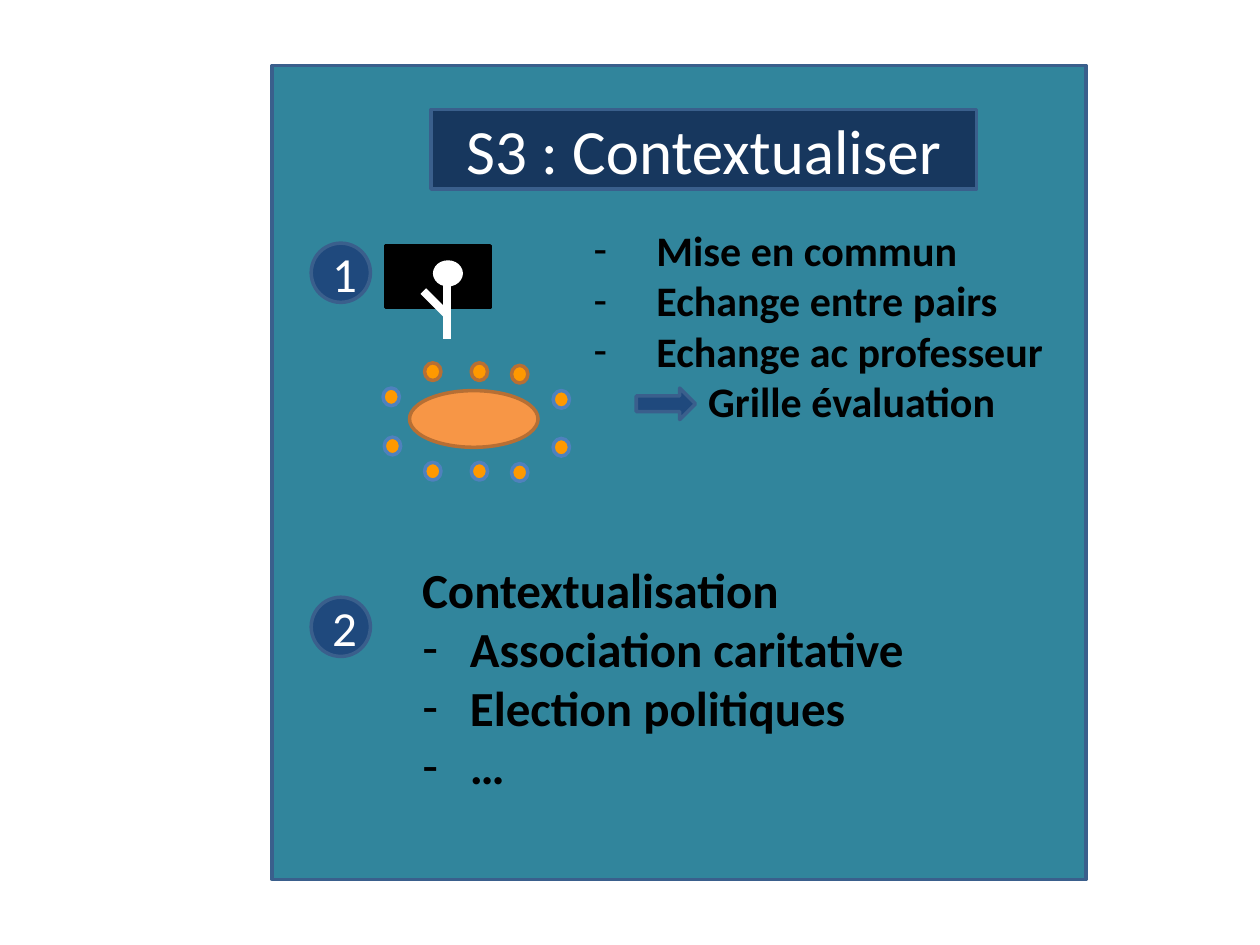
from lxml import etree
from pptx import Presentation
from pptx import util as u
from pptx.dml.color import RGBColor
from pptx.enum import shapes, text
from pptx.oxml.ns import qn

PX = 9144  # one px is a hundredth of an inch
COLORS = {
    "panel": "31859C", "title": "17375E", "badge": "1F497D", "edge": "3A5F8C",
    "black": "000000", "white": "FFFFFF", "table": "F79646", "seat": "FF9900",
    "orange edge": "B76F34", "blue edge": "4F81BD",
}
RECT, OVAL = shapes.MSO_SHAPE.RECTANGLE, shapes.MSO_SHAPE.OVAL


def style(sp, fill, line):
    sp.fill.solid()
    sp.fill.fore_color.rgb = RGBColor.from_string(COLORS[fill])
    sp.line.color.rgb = RGBColor.from_string(COLORS[line])
    sp.line.width = u.Pt(2)


def add(parent, kind, box, fill, line):
    sp = parent.add_shape(kind, *[v * PX for v in box])
    sp.shadow.inherit = False
    style(sp, fill, line)
    return sp


prs = Presentation()
prs.slide_width, prs.slide_height = 1000 * PX, 750 * PX
slide = prs.slides.add_slide(prs.slide_layouts.get_by_name("Two Content"))
title, exchange, context = list(slide.placeholders)[:3]

# Panel, behind the placeholders
panel = add(slide.shapes, RECT, (216, 52, 646, 646), "panel", "edge")
title.element.addprevious(panel.element)

# Title
title.left, title.top, title.width, title.height = [v * PX for v in (342, 87, 433, 63)]
style(title, "title", "edge")
title.text_frame.text = "S3 : Contextualiser"
title.text_frame.auto_size = text.MSO_AUTO_SIZE.NONE
title.text_frame.vertical_anchor = text.MSO_ANCHOR.MIDDLE
p = title.text_frame.paragraphs[0]
p.alignment = text.PP_ALIGN.CENTER
p.font.name, p.font.size = "Calibri", u.Pt(36)
p.font.color.rgb = RGBColor.from_string(COLORS["white"])

# Lists: (placeholder, box, size, lines as (text, left margin, dash))
lists = [
    (exchange, (461, 173, 400, 172), 24,
     [("Mise en commun", 50, True), ("Echange entre pairs", 50, True),
      ("Echange ac professeur", 50, True), ("Grille évaluation", 91, False)]),
    (context, (325, 439, 466, 199), 28,
     [("Contextualisation", 0, False), ("Association caritative", 38, True),
      ("Election politiques", 38, True), ("…", 38, True)]),
]
for sp, box, size, lines in lists:
    sp.left, sp.top, sp.width, sp.height = [v * PX for v in box]
    tf = sp.text_frame
    tf.auto_size = text.MSO_AUTO_SIZE.NONE
    tf.text = "\n".join(line[0] for line in lines)
    for p, (_, margin, dash) in zip(tf.paragraphs, lines):
        p.space_before = u.Pt(0)
        for name, value in {"name": "Calibri", "size": u.Pt(size), "bold": True}.items():
            setattr(p.font, name, value)
        p.font.color.rgb = RGBColor.from_string(COLORS["black"])
        pPr = p.font._element.getparent()
        pPr.set("marL", str(margin * PX))
        pPr.set("indent", str(-margin * PX if dash else 0))
        bullet = etree.Element(qn("a:buChar" if dash else "a:buNone"))
        if dash:
            bullet.set("char", "-")
        pPr.find(qn("a:spcBef")).addnext(bullet)

# Speaker at the blackboard
speaker = slide.shapes.add_group_shape().shapes
add(speaker, RECT, (306, 195, 83, 49), "black", "black")
add(speaker, OVAL, (345, 208, 21, 18), "white", "white")
for ends in [(355, 226, 355, 269), (336, 231, 354, 249)]:
    limb = speaker.add_connector(shapes.MSO_CONNECTOR.STRAIGHT, *[v * PX for v in ends])
    limb.line.color.rgb = RGBColor.from_string(COLORS["white"])
    limb.line.width = u.Pt(4.5)
    etree.SubElement(limb.element.spPr, qn("a:effectLst"))

# Round table and its seats
meeting = slide.shapes.add_group_shape().shapes
add(meeting, OVAL, (325, 310, 102, 45), "table", "orange edge")
seats = {
    "orange edge": [(337, 288), (374, 288), (406, 290)],
    "blue edge": [(337, 367), (374, 367), (406, 368), (304, 308),
                  (305, 347), (439, 310), (439, 348)],
}
for edge, places in seats.items():
    for x, y in places:
        add(meeting, OVAL, (x, y, 13, 14), "seat", edge)

# Numbered badges
for number, y in [("1", 193), ("2", 474)]:
    sp = add(slide.shapes, OVAL, (247, y, 47, 47), "badge", "edge")
    tf = sp.text_frame
    tf.text = number
    tf.vertical_anchor = text.MSO_ANCHOR.MIDDLE
    p = tf.paragraphs[0]
    p.alignment = text.PP_ALIGN.CENTER
    p.font.name, p.font.size = "Calibri", u.Pt(28)
    p.font.color.rgb = RGBColor.from_string(COLORS["white"])

# Arrow to the evaluation grid
add(slide.shapes, shapes.MSO_SHAPE.RIGHT_ARROW, (505, 308, 47, 25), "badge", "edge")

# Remove the unused footer placeholders, if any
for sp in list(slide.placeholders)[3:]:
    sp.element.getparent().remove(sp.element)

prs.save("out.pptx")
